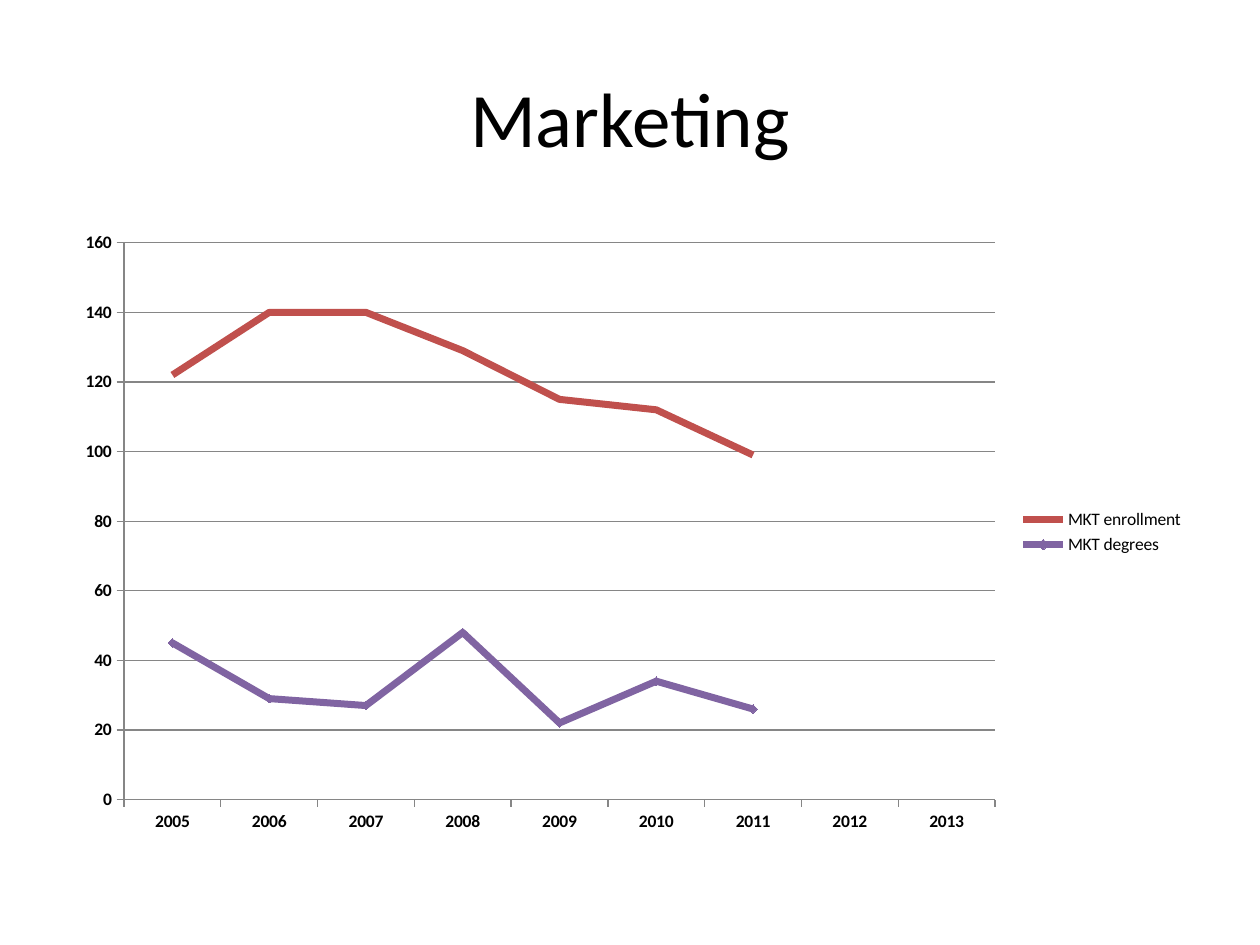
from pptx import Presentation
from pptx import util as u
from pptx.chart import data
from pptx.dml.color import RGBColor
from pptx.enum import chart as charts, text

BLACK = RGBColor(0x00, 0x00, 0x00)
GRAY = RGBColor(0x86, 0x86, 0x86)
RED = RGBColor(0xC0, 0x50, 0x4D)
PURPLE = RGBColor(0x80, 0x64, 0xA2)
FONT = "Calibri"


def write_text(box, content, size=44, color=BLACK, align=text.PP_ALIGN.CENTER):
    frame = box.text_frame
    frame.word_wrap = True
    frame.vertical_anchor = text.MSO_ANCHOR.MIDDLE
    para = frame.paragraphs[0]
    para.alignment = align
    span = para.add_run()
    span.text = content
    span.font.name = FONT
    span.font.size = u.Pt(size)
    span.font.color.rgb = color


deck = Presentation()
deck.slide_width = u.Inches(10)
deck.slide_height = u.Inches(7.5)
page = deck.slides.add_slide(deck.slide_layouts[5])

title = page.shapes.title
title.left, title.top = u.Inches(0.5), u.Inches(0.3)
title.width, title.height = u.Inches(9), u.Inches(1.25)
write_text(title, "Marketing")

chart_data = data.CategoryChartData()
chart_data.categories = [str(year) for year in range(2005, 2014)]
chart_data.add_series("MKT enrollment", [122, 140, 140, 129, 115, 112, 99, None, None])
chart_data.add_series("MKT degrees", [45, 29, 27, 48, 22, 34, 26, None, None])
chart = page.shapes.add_chart(
    charts.XL_CHART_TYPE.LINE_MARKERS,
    u.Inches(0.5), u.Inches(1.75), u.Inches(9), u.Inches(4.95), chart_data,
).chart
chart.has_title = False
chart.font.name = FONT
chart.font.size = u.Pt(10)
chart.font.color.rgb = BLACK
chart.has_legend = True
chart.legend.position = charts.XL_LEGEND_POSITION.RIGHT
chart.legend.include_in_layout = False

for axis in (chart.category_axis, chart.value_axis):
    axis.major_tick_mark = charts.XL_TICK_MARK.OUTSIDE
    axis.minor_tick_mark = charts.XL_TICK_MARK.NONE
    axis.format.line.color.rgb = GRAY
    axis.format.line.width = u.Pt(0.75)
    axis.tick_labels.font.bold = True
    axis.tick_labels.font.size = u.Pt(10)
    axis.tick_labels.font.name = FONT
    axis.tick_labels.font.color.rgb = BLACK

value_axis = chart.value_axis
value_axis.minimum_scale = 0
value_axis.maximum_scale = 160
value_axis.major_unit = 20
value_axis.has_major_gridlines = True
value_axis.major_gridlines.format.line.color.rgb = GRAY
value_axis.major_gridlines.format.line.width = u.Pt(0.75)

plot = chart.plots[0]
plot.vary_by_categories = False
markers = (charts.XL_MARKER_STYLE.NONE, charts.XL_MARKER_STYLE.DIAMOND)
for series, color, marker in zip(plot.series, (RED, PURPLE), markers):
    series.smooth = False
    series.format.line.color.rgb = color
    series.format.line.width = u.Pt(4)
    series.marker.style = marker
    series.marker.size = 5
    series.marker.format.fill.solid()
    series.marker.format.fill.fore_color.rgb = color
    series.marker.format.line.color.rgb = color

deck.save("out.pptx")
